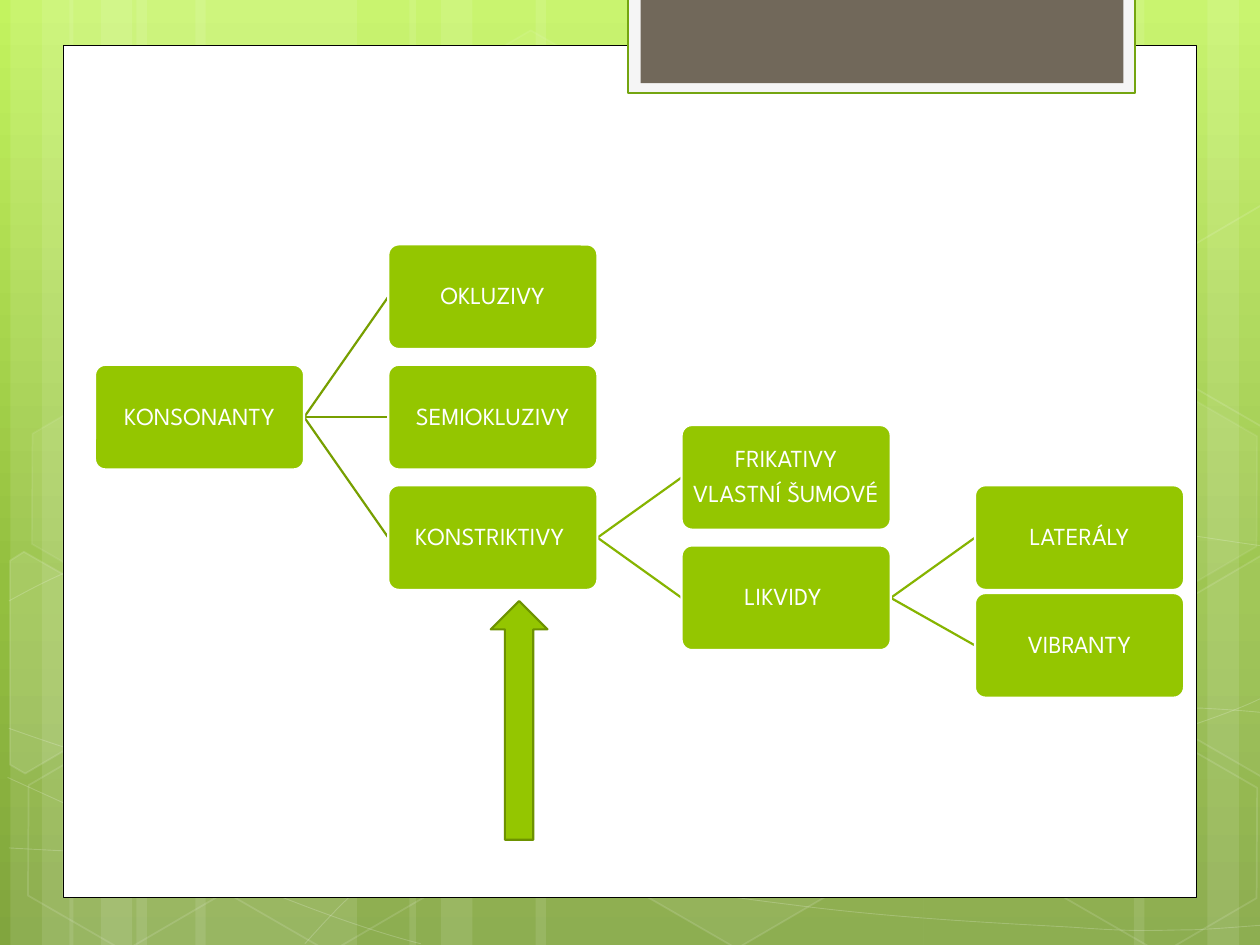
from copy import deepcopy
from dataclasses import dataclass

from lxml import etree
from pptx import Presentation
from pptx.dml.color import RGBColor
from pptx.enum.shapes import MSO_CONNECTOR, MSO_SHAPE
from pptx.enum.text import MSO_ANCHOR, PP_ALIGN
from pptx.oxml.ns import qn
from pptx.util import Inches, Pt

RECT = MSO_SHAPE.RECTANGLE
ROUND_RECT = MSO_SHAPE.ROUNDED_RECTANGLE
HEXAGON = MSO_SHAPE.HEXAGON
UP_ARROW = MSO_SHAPE.UP_ARROW
STRAIGHT = MSO_CONNECTOR.STRAIGHT
CENTER = PP_ALIGN.CENTER
MIDDLE = MSO_ANCHOR.MIDDLE


@dataclass(frozen=True)
class Theme:
    white: str = "FFFFFF"
    black: str = "000000"
    green: str = "94C600"
    arrow_line: str = "6D9200"
    first_link: str = "779F00"
    next_link: str = "86B400"
    tab: str = "F5F5F5"
    tab_line: str = "74A510"
    tab_core: str = "71685A"
    sky: tuple = ((0, "C3F35F"), (0.62, "93BF3F"), (1, "81A53E"))
    font: str = "League Spartan"
    size: float = 14
    hair: float = 0.5
    thin: float = 1
    line: float = 1.25


T = Theme()

COLS, ROWS = 100, 75
CELL = Inches(0.1)

STRIPES = [(10.83, 17.5), (0.83, 5), (3.33, 8.33), (15.5, 17.5), (5.5, 5), (8, 8.33),
           (73.33, 17.5), (95.83, 5), (90, 8.33), (42.5, 30.83), (32.5, 5), (35, 8.33)]

CURVES = [
    [(0.7, 67.3), (6.1, 67.6), (11.5, 67.9), (19, 67.8), (26.5, 67.7), (35.8, 67.5), (45.8, 66.5),
     (55.8, 65.5), (70, 63.6), (79.2, 61.7), (88.3, 59.8), (97.7, 56.8), (100.7, 55.1)],
    [(0.7, 47.7), (3.6, 46.1), (6.5, 44.6), (12.1, 43.1), (17.8, 41.6), (25.9, 39.4), (34.7, 38.7),
     (43.6, 38), (54.4, 37.9), (65.4, 38.7), (76.4, 39.5), (94.7, 42.6), (100.7, 43.4)],
    [(0.6, 61.7), (12.7, 67.2), (24.7, 72.7), (33.4, 74.9)],
    [(0.7, 57.8), (3.8, 58.9), (7, 60), (12.8, 61.6), (18.6, 63.1), (27.3, 65.6), (35.7, 67.3),
     (44, 69), (54.5, 70.8), (62.8, 71.8), (71.1, 72.9), (80, 73.3), (85.3, 73.6),
     (90.5, 74), (91.9, 73.8), (94.5, 73.8), (97.1, 73.7), (98.9, 73.5), (100.7, 73.4)],
    [(24.2, 74.9), (26, 72.9), (27.8, 70.9), (30.2, 69.1), (32.6, 67.3), (36, 65.3), (38.8, 63.9),
     (41.6, 62.5), (43.3, 61.9), (47, 60.9), (50.6, 59.9), (57.3, 58.5), (60.8, 57.8),
     (64.4, 57.1), (64.9, 57.1), (68, 56.9), (71.1, 56.6), (76, 56.3), (79.4, 56.2),
     (82.9, 56.1), (88.6, 56.2), (88.6, 56.2), (90.8, 56.2), (93.1, 56.2), (95.3, 56.2),
     (97.1, 56.3), (98.8, 56.4), (100.6, 56.6)],
]

HEXAGONS = [(33.4, 3.6, 4, 8), (49.7, 58.9, 6, 12), (1.1, 59.1, 0, 12), (1.4, 31.2, 7, 8),
            (17.4, 59.2, 0, 12), (75.3, 45.3, 10, 12), (83.4, 59.3, 0, 12), (83.4, 31.4, 7, 8)]

CUT_HEXAGONS = [
    ([(0.8, 44.5), (1.9, 43.8), (9.6, 48.2), (9.5, 57), (2, 61.4), (0.8, 60.7)], 10),
    ([(92.6, 48.5), (100.1, 44.1), (100.9, 44.6), (100.9, 61.3), (100.2, 61.7), (92.6, 57.3)], 4),
    ([(92.6, 20.7), (100.1, 16.3), (101, 16.8), (100.9, 33.5), (100.2, 33.9), (92.6, 29.5)], 0),
]

BOX_W, BOX_H = 16.6, 8.3
TREE_X, TREE_Y = 7.54, 19.4
COL_STEP, ROW_STEP = 23.28, 4.78
NODES = {"KONSONANTY": (0, 2), "OKLUZIVY": (1, 0), "SEMIOKLUZIVY": (1, 2), "KONSTRIKTIVY ": (1, 4),
         "FRIKATIVY\nVLASTNÍ ŠUMOVÉ": (2, 3), "LIKVIDY ": (2, 5),
         "LATERÁLY": (3, 4), "VIBRANTY": (3, 5.79)}
CHILDREN = {"KONSONANTY": ["OKLUZIVY", "SEMIOKLUZIVY", "KONSTRIKTIVY "],
            "KONSTRIKTIVY ": ["FRIKATIVY\nVLASTNÍ ŠUMOVÉ", "LIKVIDY "],
            "LIKVIDY ": ["LATERÁLY", "VIBRANTY"]}


def grid(*cells):
    return [round(c * CELL) for c in cells]


def set_color(fill, color, alpha=100):
    fill.solid()
    fill.fore_color.rgb = RGBColor.from_string(color)
    if alpha < 100:
        clr = fill._xPr.find(".//" + qn("a:srgbClr"))
        etree.SubElement(clr, qn("a:alpha"), val=str(alpha * 1000))


def paint(sp, fill=None, alpha=100, line=None, width=T.line, line_alpha=100):
    sp.shadow.inherit = False
    if fill and alpha:
        set_color(sp.fill, fill, alpha)
    else:
        sp.fill.background()
    if line:
        set_color(sp.line.fill, line, line_alpha)
        sp.line.width = Pt(width)
    else:
        sp.line.fill.background()


def add_shape(s, kind, x, y, w, h, rotation=0, adj=(), **style):
    sp = s.shapes.add_shape(kind, *grid(x, y, w, h))
    sp.rotation = rotation
    for i, value in enumerate(adj):
        sp.adjustments[i] = value
    paint(sp, **style)
    return sp


def add_outline(s, points, close=False, **style):
    start, *rest = [tuple(grid(*pt)) for pt in points]
    builder = s.shapes.build_freeform(*start)
    builder.add_line_segments(rest, close=close)
    sp = builder.convert_to_shape()
    paint(sp, **style)
    return sp


def add_curve(s, points, **style):
    sp = add_outline(s, points, **style)
    lines = list(sp._element.iter(qn("a:lnTo")))
    for i in range(0, len(lines), 3):
        curve = etree.SubElement(lines[i].getparent(), qn("a:cubicBezTo"))
        for line in lines[i:i + 3]:
            line.getparent().remove(line)
            curve.append(line[0])


def add_text(sp, text, size=T.size, color=T.white, font=T.font, align=CENTER, after=4.9):
    tf = sp.text_frame
    tf.word_wrap = True
    tf.vertical_anchor = MIDDLE
    tf.margin_left = tf.margin_right = tf.margin_top = tf.margin_bottom = Inches(0.01)
    for i, line in enumerate(text.split("\n")):
        p = tf.add_paragraph() if i else tf.paragraphs[0]
        p.alignment = align
        p.line_spacing = 0.9
        p.space_after = Pt(after)
        r = p.add_run()
        r.text = line
        r.font.size = Pt(size)
        r.font.name = font
        r.font.color.rgb = RGBColor.from_string(color)


def add_link(s, start, end, color):
    c = s.shapes.add_connector(STRAIGHT, *grid(*start, *end))
    set_color(c.line.fill, color)
    c.line.width = Pt(T.line)
    etree.SubElement(c._element.spPr, qn("a:effectLst"))


def add_background(s):
    fill = s.background.fill
    fill.gradient()
    fill.gradient_angle = 270
    stops = s.element.find(".//" + qn("a:gsLst"))
    stops.append(deepcopy(stops[0]))
    for stop, (position, color) in zip(fill.gradient_stops, T.sky):
        stop.position = position
        stop.color.rgb = RGBColor.from_string(color)


def add_decoration(s):
    for x, w in STRIPES:
        add_shape(s, RECT, x, 0, w, ROWS, fill=T.white, alpha=10)
    for points in CURVES:
        add_curve(s, points, line=T.white, width=T.hair, line_alpha=20)
    for x, y, alpha, line_alpha in HEXAGONS:
        add_shape(s, HEXAGON, x, y, 17.5, 15.2, rotation=30, adj=(0.285, 1.155), fill=T.white,
                  alpha=alpha, line=T.white, width=T.thin, line_alpha=line_alpha)
    for points, alpha in CUT_HEXAGONS:
        add_outline(s, points, close=True, fill=T.white, alpha=alpha,
                    line=T.white, width=T.thin, line_alpha=12)


def add_panel(s):
    add_shape(s, RECT, 5, 3.6, 90, 67.65, fill=T.white, line=T.black, width=T.hair)
    add_shape(s, RECT, 49.86, -0.2, 40.24, 7.6, fill=T.tab, line=T.tab_line)
    add_shape(s, RECT, 50.84, -0.2, 38.32, 6.8, fill=T.tab_core)


def node_corner(name):
    col, row = NODES[name]
    return TREE_X + col * COL_STEP, TREE_Y + row * ROW_STEP


def add_tree(s):
    for parent, children in CHILDREN.items():
        x, y = node_corner(parent)
        color = T.next_link if NODES[parent][0] else T.first_link
        for child in children:
            cx, cy = node_corner(child)
            add_link(s, (x + BOX_W, y + BOX_H / 2), (cx, cy + BOX_H / 2), color)
    for name in NODES:
        sp = add_shape(s, ROUND_RECT, *node_corner(name), BOX_W, BOX_H, adj=(0.1,),
                       fill=T.green, line=T.white)
        add_text(sp, name)


def main():
    prs = Presentation()
    prs.slide_width, prs.slide_height = grid(COLS, ROWS)
    s = prs.slides.add_slide(prs.slide_layouts[6])
    add_background(s)
    add_decoration(s)
    add_panel(s)
    add_tree(s)
    add_shape(s, UP_ARROW, 38.95, 47.7, 4.5, 18.95, fill=T.green, line=T.arrow_line)
    prs.save("out.pptx")


if __name__ == "__main__":
    main()
